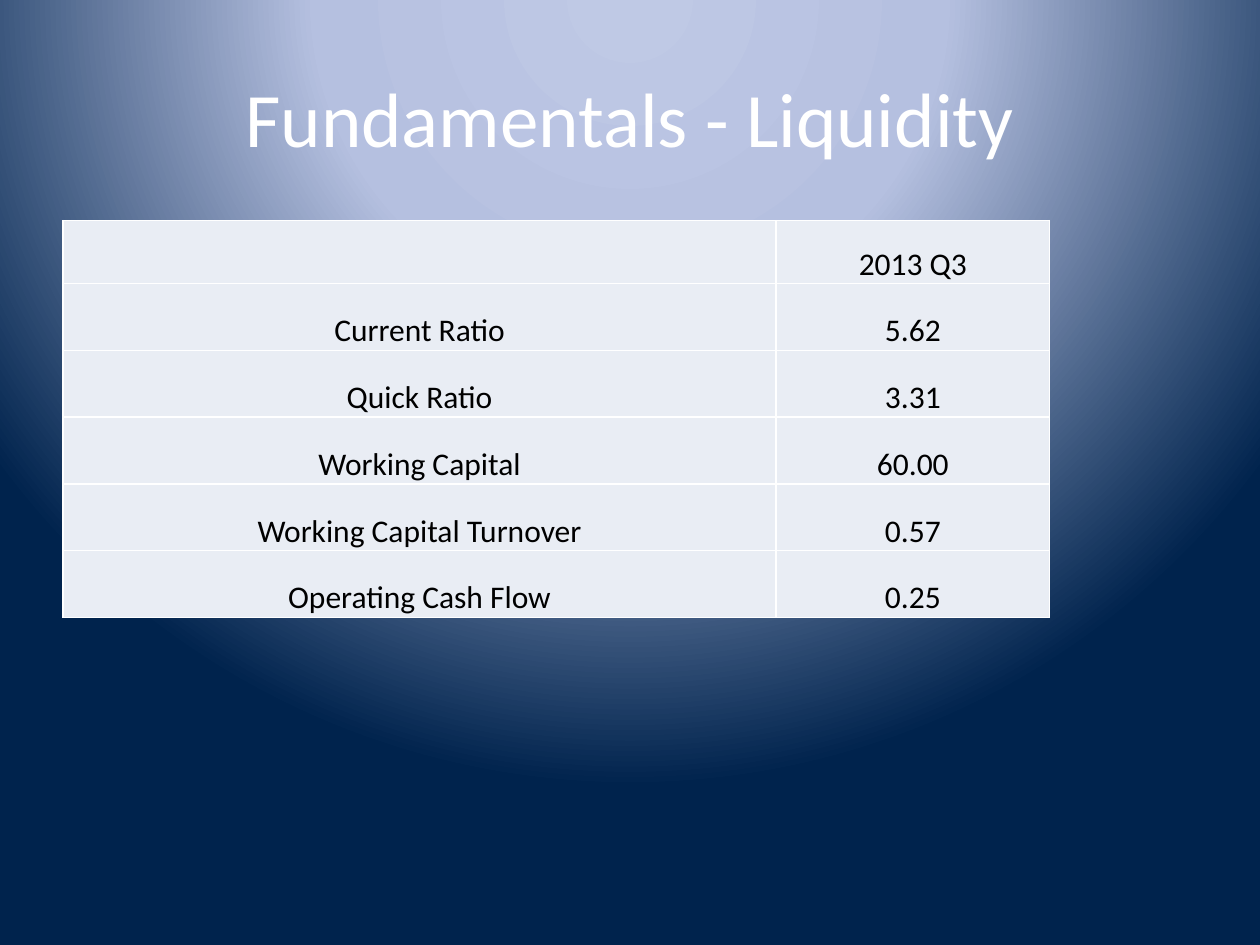
"""Build the liquidity fundamentals slide."""
import pptx
import pptx.dml.color
import pptx.enum.text
import pptx.oxml
import pptx.oxml.ns
import pptx.util

Inches = pptx.util.Inches
FONT = "Calibri"
COLORS = {
    "title": "FFFFFF",
    "body": "000000",
    "cell": "E9EDF4",
    "border": "FFFFFF",
    "glow": "BFC9E5",
    "halo": "B5C0E0",
    "navy": "00234D",
}
RATIOS = [
    ("", "2013 Q3"),
    ("Current Ratio", "5.62"),
    ("Quick Ratio", "3.31"),
    ("Working Capital", "60.00"),
    ("Working Capital Turnover", "0.57"),
    ("Operating Cash Flow", "0.25"),
]
COLUMN_WIDTHS = [5.66, 2.17]
HEADER_HEIGHT, ROW_HEIGHT = 0.5, 0.53


def rgb(name):
    return pptx.dml.color.RGBColor.from_string(COLORS[name])


def paint_background(slide):
    slide.background.fill.solid()
    properties = slide.element.xpath("p:cSld/p:bg/p:bgPr")[0]
    stops = "".join(
        f'<a:gs pos="{percent * 1000}"><a:srgbClr val="{COLORS[name]}"/></a:gs>'
        for percent, name in [(0, "glow"), (40, "halo"), (100, "navy")]
    )
    gradient = pptx.oxml.parse_xml(
        f'<a:gradFill {pptx.oxml.ns.nsdecls("a")} rotWithShape="1">'
        f'<a:gsLst>{stops}</a:gsLst><a:path path="circle">'
        '<a:fillToRect l="50000" t="-80000" r="50000" b="180000"/>'
        "</a:path></a:gradFill>"
    )
    properties.replace(properties[0], gradient)


def write_centred(frame, text, size, color):
    paragraph = frame.paragraphs[0]
    paragraph.alignment = pptx.enum.text.PP_ALIGN.CENTER
    run = paragraph.add_run()
    run.text = text
    run.font.name = FONT
    run.font.size = pptx.util.Pt(size)
    run.font.color.rgb = rgb(color)


def add_title(slide, text):
    title = slide.shapes.add_textbox(Inches(0.5), Inches(0.3), Inches(9), Inches(1.25))
    frame = title.text_frame
    frame.word_wrap = True
    frame.vertical_anchor = pptx.enum.text.MSO_ANCHOR.MIDDLE
    write_centred(frame, text, 44, "title")


def add_borders(cell):
    properties = cell._tc.get_or_add_tcPr()
    for position, side in enumerate(["lnL", "lnR", "lnT", "lnB"]):
        border = pptx.oxml.parse_xml(
            f'<a:{side} {pptx.oxml.ns.nsdecls("a")} w="{pptx.util.Pt(1)}"><a:solidFill>'
            f'<a:srgbClr val="{COLORS["border"]}"/></a:solidFill></a:{side}>'
        )
        properties.insert(position, border)


def fill_cell(cell, text):
    cell.fill.solid()
    cell.fill.fore_color.rgb = rgb("cell")
    cell.vertical_anchor = pptx.enum.text.MSO_ANCHOR.BOTTOM
    cell.margin_left = cell.margin_right = cell.margin_top = Inches(0.01)
    cell.margin_bottom = 0
    add_borders(cell)
    if text:
        write_centred(cell.text_frame, text, 18, "body")


def add_ratio_table(slide, ratios):
    heights = [HEADER_HEIGHT] + [ROW_HEIGHT] * (len(ratios) - 1)
    table = slide.shapes.add_table(
        len(ratios), len(COLUMN_WIDTHS), Inches(0.5), Inches(1.75),
        Inches(sum(COLUMN_WIDTHS)), Inches(sum(heights)),
    ).table
    for column, width in zip(table.columns, COLUMN_WIDTHS):
        column.width = Inches(width)
    for row, height, texts in zip(table.rows, heights, ratios):
        row.height = Inches(height)
        for cell, text in zip(row.cells, texts):
            fill_cell(cell, text)


def main():
    deck = pptx.Presentation()
    deck.slide_width, deck.slide_height = Inches(10), Inches(7.5)
    slide = deck.slides.add_slide(deck.slide_layouts[6])
    paint_background(slide)
    add_title(slide, "Fundamentals - Liquidity")
    add_ratio_table(slide, RATIOS)
    deck.save("out.pptx")


if __name__ == "__main__":
    main()
